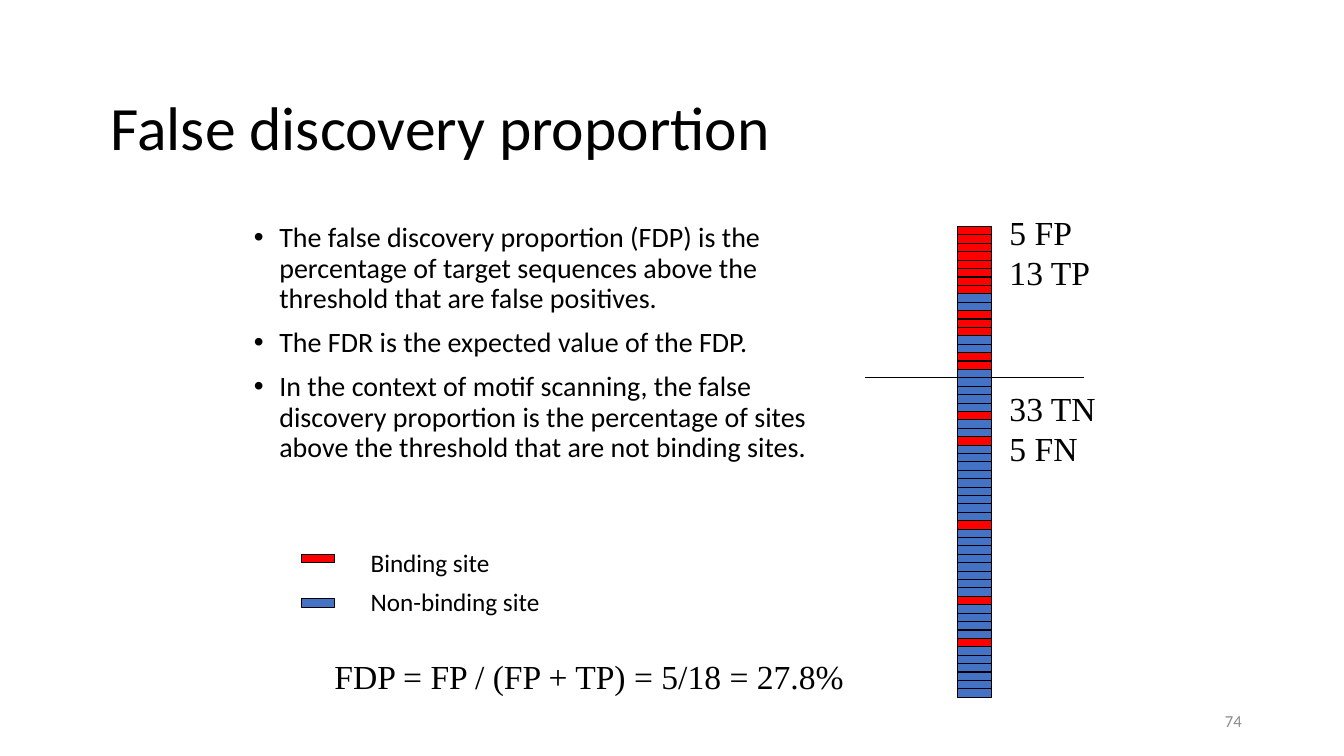
from lxml import etree
from pptx import Presentation
from pptx.dml.color import RGBColor
from pptx.enum.shapes import MSO_CONNECTOR, MSO_SHAPE
from pptx.enum.text import MSO_ANCHOR, PP_ALIGN
from pptx.oxml.ns import qn
from pptx.util import Cm, Pt

RECTANGLE = MSO_SHAPE.RECTANGLE
STRAIGHT = MSO_CONNECTOR.STRAIGHT
TOP, MIDDLE = MSO_ANCHOR.TOP, MSO_ANCHOR.MIDDLE
RIGHT = PP_ALIGN.RIGHT

COLORS = {"text": "000000", "number": "8C8C8C",
          "binding": "FF0000", "other": "4472C4"}
SANS, SERIF = "Calibri", "Times New Roman"
SITE_WIDTH = 0.85
RANKING_TOP, RANKING_HEIGHT = 5.71, 11.86

deck = Presentation()
deck.slide_width, deck.slide_height = Cm(33.87), Cm(19.05)
page = deck.slides.add_slide(deck.slide_layouts[6])


def add_text(left, top, width, height, lines, size, font,
             color="text", wrap=False, anchor=TOP):
    box = page.shapes.add_textbox(Cm(left), Cm(top), Cm(width), Cm(height))
    frame = box.text_frame
    frame.word_wrap = wrap
    frame.vertical_anchor = anchor
    frame.text = "\n".join(lines)
    for paragraph in frame.paragraphs:
        for span in paragraph.runs:
            span.font.size = Pt(size)
            span.font.name = font
            span.font.color.rgb = RGBColor.from_string(COLORS[color])
    return frame


def add_site(left, top, height, kind):
    site = page.shapes.add_shape(RECTANGLE, Cm(left), Cm(top),
                                 Cm(SITE_WIDTH), Cm(height))
    site.shadow.inherit = False
    site.fill.solid()
    site.fill.fore_color.rgb = RGBColor.from_string(COLORS[kind])
    site.line.color.rgb = RGBColor.from_string(COLORS["text"])
    site.line.width = Pt(0.75)


# Title
title = add_text(2.54, 1.7, 28.78, 3.18, ["False discovery proportion"],
                 44, SANS, wrap=True, anchor=MIDDLE)
title.paragraphs[0].line_spacing = 0.9

# Bullets
bullets = add_text(6.15, 5.51, 14.48, 11.43, [
    "The false discovery proportion (FDP) is the percentage of target "
    "sequences above the threshold that are false positives.",
    "The FDR is the expected value of the FDP.",
    "In the context of motif scanning, the false discovery proportion is "
    "the percentage of sites above the threshold that are not binding sites.",
], 20, SANS, wrap=True)
for index, paragraph in enumerate(bullets.paragraphs):
    properties = paragraph._p.get_or_add_pPr()
    properties.set("marL", str(Cm(0.64)))
    properties.set("indent", str(Cm(-0.64)))
    etree.SubElement(properties, qn("a:buFont")).set("typeface", "Arial")
    etree.SubElement(properties, qn("a:buChar")).set("char", "•")
    paragraph.line_spacing = 0.9
    paragraph.space_before = Pt(10 if index else 0)

# Ranked sites: run lengths alternate between binding and non-binding
run_lengths = [8, 2, 3, 2, 2, 5, 1, 2, 1, 9, 1, 8, 1, 4, 1, 6]
ranking = []
for index, length in enumerate(run_lengths):
    ranking += ["other" if index % 2 else "binding"] * length
site_height = RANKING_HEIGHT / len(ranking)
for rank, kind in enumerate(ranking):
    add_site(24.13, RANKING_TOP + rank * site_height, site_height, kind)

# Threshold after the 18 top-ranked sites
threshold_y = Cm(RANKING_TOP + 18 * site_height)
threshold = page.shapes.add_connector(STRAIGHT, Cm(21.8), threshold_y,
                                      Cm(27.31), threshold_y)
threshold.line.color.rgb = RGBColor.from_string(COLORS["text"])
threshold.line.width = Pt(0.75)
etree.SubElement(threshold._element.spPr, qn("a:effectLst"))

# Counts and formula
add_text(25.19, 5.21, 2.57, 2.31, ["5 FP", "13 TP"], 24, SERIF)
add_text(25.19, 9.65, 2.72, 2.31, ["33 TN", "5 FN"], 24, SERIF)
add_text(8.18, 16.41, 13.59, 1.27,
         ["FDP = FP / (FP + TP) = 5/18 = 27.8%"], 24, SERIF)

# Legend
for kind, label, site_top, label_top, label_width in [
    ("binding", "Binding site", 13.97, 13.67, 3.53),
    ("other", "Non-binding site", 15.09, 14.66, 4.83),
]:
    add_site(7.59, site_top, site_height, kind)
    add_text(9.09, label_top, label_width, 1.02, [label], 18, SANS)

# Slide number
number = add_text(23.93, 17.65, 7.62, 1.02, ["74"], 12, SANS,
                  color="number", wrap=True, anchor=MIDDLE)
number.paragraphs[0].alignment = RIGHT

deck.save("out.pptx")
